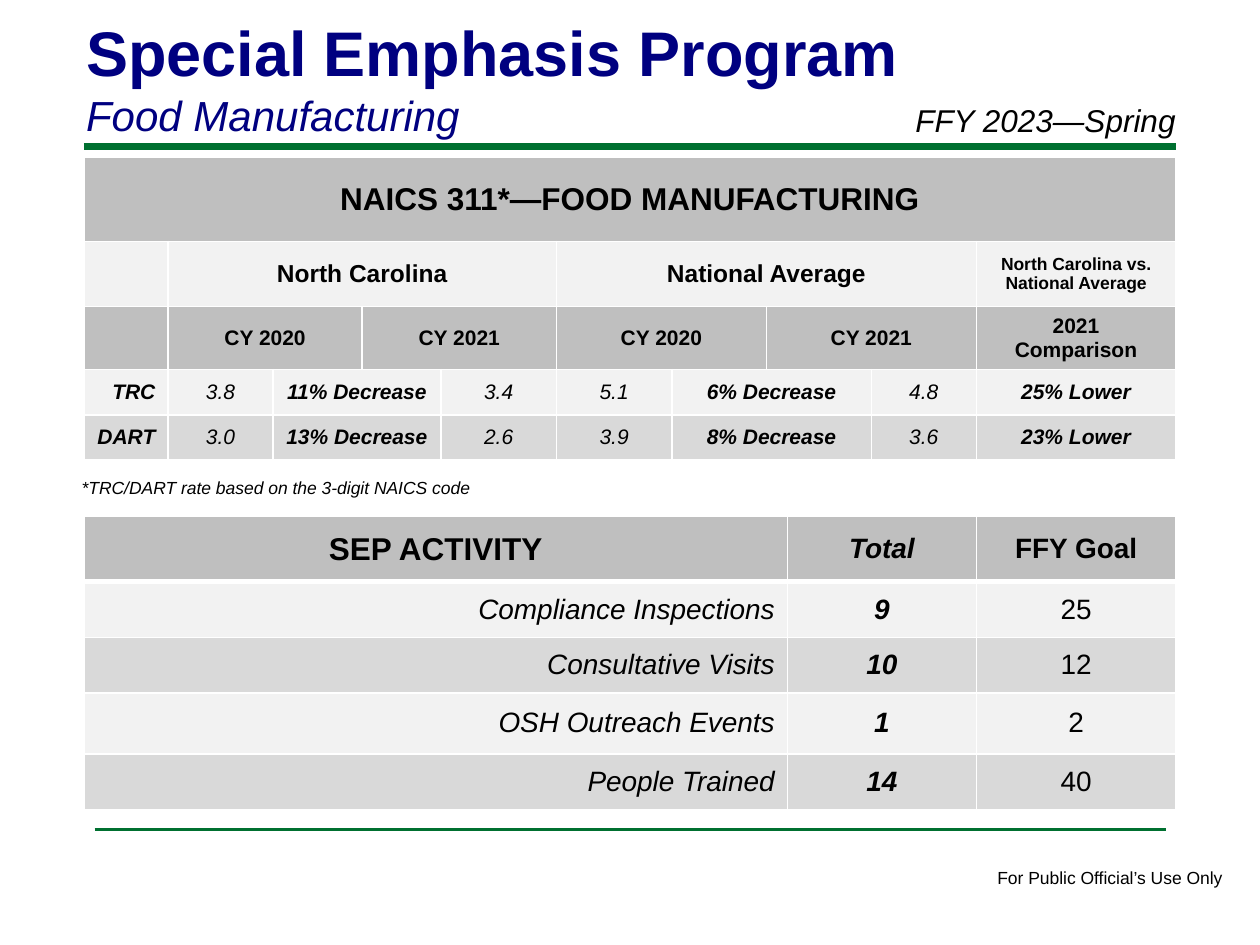
from dataclasses import dataclass

from lxml.etree import SubElement as Sub
from pptx import Presentation
from pptx.dml.color import RGBColor as Color
from pptx.enum.shapes import MSO_CONNECTOR as Conn
from pptx.enum.text import MSO_ANCHOR as Anchor
from pptx.enum.text import MSO_AUTO_SIZE as Auto
from pptx.enum.text import PP_ALIGN as Align
from pptx.oxml.ns import qn
from pptx.util import Inches, Pt


@dataclass(frozen=True)
class Theme:
    """Colours, font and type sizes of the slide."""
    font: str = "Arial"
    navy: str = "000080"
    green: str = "007030"
    black: str = "000000"
    white: str = "FFFFFF"
    head: str = "BFBFBF"
    light: str = "F2F2F2"
    dark: str = "D9D9D9"
    title: int = 36
    sub: int = 24
    large: int = 18
    mid: int = 16
    group: int = 14
    body: int = 12
    note: int = 10


T = Theme()
LEFT, RIGHT = 8, 112


def grid(n):
    """Turn grid units, twelve to the inch, into a length."""
    return Inches(n / 12)


def write(frame, text, size=T.body, color=T.black, bold=False, italic=False,
          align=Align.LEFT, more=False):
    """Write one formatted paragraph into a text frame."""
    para = frame.add_paragraph() if more else frame.paragraphs[0]
    para.alignment = align
    run = para.add_run()
    run.text = text
    font = run.font
    font.name, font.size = T.font, Pt(size)
    font.bold, font.italic = bold, italic
    font.color.rgb = Color.from_string(color)


def add_title(slide, title, sub):
    """Fill the title placeholder with a title and a subtitle."""
    shape = slide.shapes.title
    shape.left, shape.top = grid(7), grid(0.7)
    shape.width, shape.height = grid(99), grid(13.3)
    frame = shape.text_frame
    frame.vertical_anchor = Anchor.TOP
    frame.auto_size = Auto.SHAPE_TO_FIT_TEXT
    write(frame, title, T.title, T.navy, bold=True)
    write(frame, sub, T.sub, T.navy, italic=True, more=True)


def add_label(slide, box, text, wrap=False, **fmt):
    """Add a text box placed in grid units."""
    frame = slide.shapes.add_textbox(*map(grid, box)).text_frame
    frame.word_wrap = wrap
    frame.auto_size = Auto.SHAPE_TO_FIT_TEXT
    write(frame, text, **fmt)


def add_rule(slide, inset, y, width):
    """Add a green rule across the content area."""
    ends = grid(LEFT + inset), grid(y), grid(RIGHT - inset), grid(y)
    rule = slide.shapes.add_connector(Conn.STRAIGHT, *ends)
    rule.line.color.rgb = Color.from_string(T.green)
    rule.line.width = Pt(width)
    Sub(rule._element.spPr, qn("a:effectLst"))


def edge(cell, top, bottom):
    """Draw white borders around a cell."""
    props = cell._tc.get_or_add_tcPr()
    for side, width in zip("LRTB", (1, 1, top, bottom)):
        line = Sub(props, qn("a:ln" + side), w=str(Pt(width)))
        Sub(Sub(line, qn("a:solidFill")), qn("a:srgbClr"), val=T.white)


def add_grid(slide, y, cols, heights, fills, rows, bar=1):
    """Add a table whose rows list cells as text, span and format."""
    box = map(grid, (LEFT, y, sum(cols), sum(heights)))
    table = slide.shapes.add_table(len(heights), len(cols), *box).table
    table.first_row = table.horz_banding = False
    for col, width in zip(table.columns, cols):
        col.width = grid(width)
    for r, (height, fill, items) in enumerate(zip(heights, fills, rows)):
        table.rows[r].height = grid(height)
        for c in range(len(cols)):
            cell = table.cell(r, c)
            edge(cell, bar if r == 1 else 1, bar if r == 0 else 1)
            cell.fill.solid()
            cell.fill.fore_color.rgb = Color.from_string(fill)
            cell.vertical_anchor = Anchor.MIDDLE
        c = 0
        for text, span, fmt in items:
            cell = table.cell(r, c)
            if span > 1:
                cell.merge(table.cell(r, c + span - 1))
            if text:
                write(cell.text_frame, text, **{"align": Align.CENTER, **fmt})
            c += span


def add_rates(slide):
    """Add the table of injury rates."""
    def bold(text, span=1, size=T.body, **fmt):
        return text, span, dict(size=size, bold=True, **fmt)

    def rate(name, *vals):
        spans = 1, 1, 2, 1, 1, 2, 1, 1
        strong = 0, 2, 5, 7
        cells = [(v, s, dict(italic=True, bold=i in strong))
                 for i, (v, s) in enumerate(zip((name, *vals), spans))]
        cells[0][2]["align"] = Align.RIGHT
        return cells

    years = [bold(year, 2) for year in ("CY 2020", "CY 2021")]
    rows = [
        [bold("NAICS 311*—FOOD MANUFACTURING", 10, T.large)],
        [bold(""), bold("North Carolina", 4, T.group),
         bold("National Average", 4, T.group),
         bold("North Carolina vs. National Average", 1, T.note)],
        [bold(""), *years, *years, bold("2021 Comparison")],
        rate("TRC", "3.8", "11% Decrease", "3.4",
             "5.1", "6% Decrease", "4.8", "25% Lower"),
        rate("DART", "3.0", "13% Decrease", "2.6",
             "3.9", "8% Decrease", "3.6", "23% Lower"),
    ]
    add_grid(slide, 15, (8, 10, 8.5, 7.5, 11, 11, 9, 10, 10, 19),
             (8, 6.2, 5.8, 4.3, 4.3),
             (T.head, T.light, T.head, T.light, T.dark), rows)


def add_goals(slide):
    """Add the table of program activity against goals."""
    goals = (("Compliance Inspections", "9", "25"),
             ("Consultative Visits", "10", "12"),
             ("OSH Outreach Events", "1", "2"),
             ("People Trained", "14", "40"))
    total = dict(size=T.mid, bold=True, italic=True)
    name = dict(size=T.mid, italic=True, align=Align.RIGHT)
    rows = [[("SEP ACTIVITY", 1, dict(size=T.large, bold=True)),
             ("Total", 1, total),
             ("FFY Goal", 1, dict(size=T.mid, bold=True))]]
    rows += [[(task, 1, name), (done, 1, total), (goal, 1, dict(size=T.mid))]
             for task, done, goal in goals]
    add_grid(slide, 49.2, (67, 18, 19), (6.2, 5.3, 5.3, 5.8, 5.3),
             (T.head, T.light, T.dark, T.light, T.dark), rows, bar=3)


def main():
    """Build the slide and save it."""
    deck = Presentation()
    deck.slide_width, deck.slide_height = Inches(10), Inches(7.5)
    slide = deck.slides.add_slide(deck.slide_layouts[5])
    add_rule(slide, 0, 14, 4)
    add_rule(slide, 1, 79, 2)
    add_label(slide, (93.8, 82, 24.1, 3.2),
              "For Public Official’s Use Only", size=T.note)
    add_title(slide, "Special Emphasis Program", "Food Manufacturing")
    add_label(slide, (6.6, 44.8, 40.6, 3.2),
              "*TRC/DART rate based on the 3-digit NAICS code",
              size=T.note, italic=True)
    add_goals(slide)
    add_rates(slide)
    add_label(slide, (86, 9, 30, 4.8), "FFY 2023—Spring", wrap=True,
              size=T.large, italic=True)
    deck.save("out.pptx")


if __name__ == "__main__":
    main()
